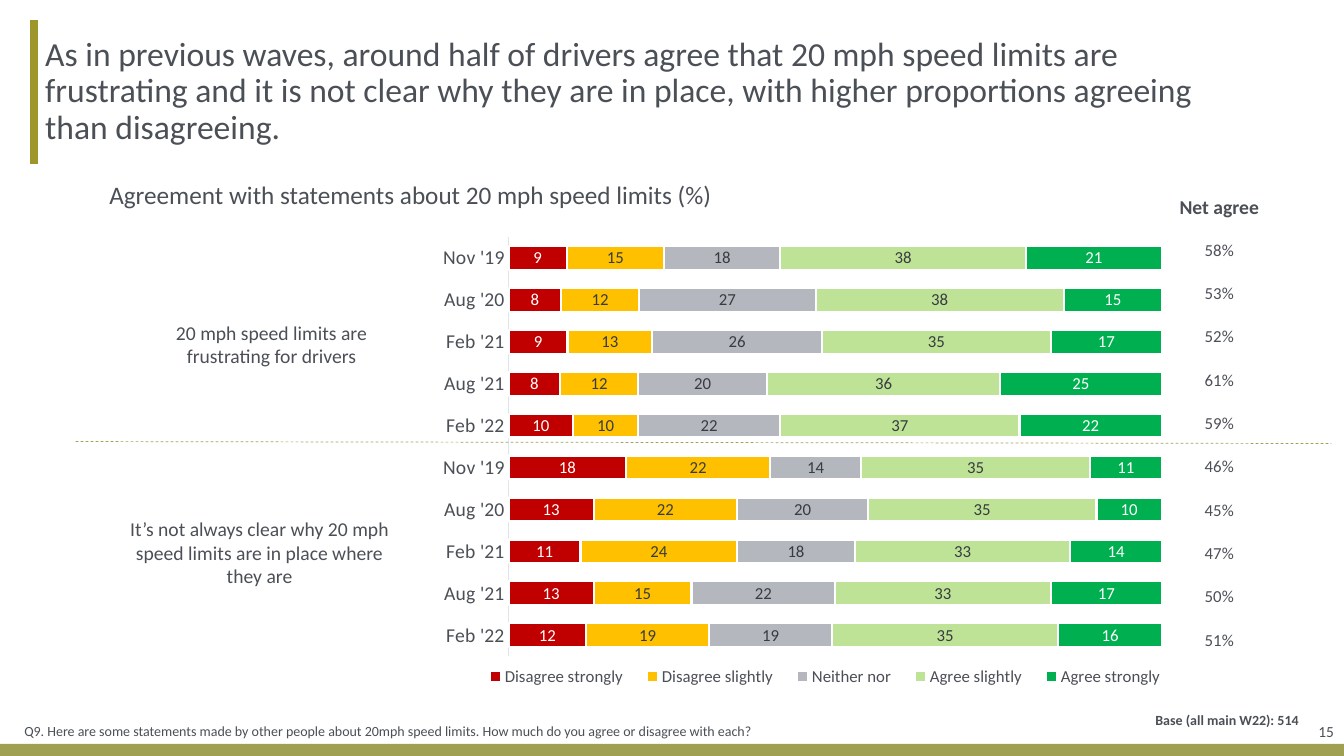
from lxml.etree import SubElement
from pptx import Presentation
from pptx.chart.data import CategoryChartData
from pptx.dml.color import RGBColor
from pptx.enum.chart import (XL_CHART_TYPE, XL_LABEL_POSITION,
                             XL_LEGEND_POSITION, XL_TICK_MARK)
from pptx.enum.dml import MSO_LINE
from pptx.enum.shapes import MSO_CONNECTOR, MSO_SHAPE
from pptx.enum.text import MSO_ANCHOR, MSO_AUTO_SIZE, PP_ALIGN
from pptx.oxml import parse_xml
from pptx.oxml.ns import nsdecls, qn
from pptx.util import Pt

FONT = "Calibri"
GREY, DARK, WHITE = "4B4F56", "383B40", "FFFFFF"
GOLD, OLIVE = "9F962B", "9FA052"
NO_STYLE = "{2D5ABB26-0587-4C30-8999-92F81FD0307C}"
WAVES = ["Nov '19", "Aug '20", "Feb '21", "Aug '21", "Feb '22"]
SERIES = [
    ("Disagree strongly", [9, 8, 9, 8, 10, 18, 13, 11, 13, 12], "C00000", WHITE),
    ("Disagree slightly", [15, 12, 13, 12, 10, 22, 22, 24, 15, 19], "FFC000", DARK),
    ("Neither nor", [18, 27, 26, 20, 22, 14, 20, 18, 22, 19], "B4B8BE", DARK),
    ("Agree slightly", [38, 38, 35, 36, 37, 35, 35, 33, 33, 35], "BEE396", DARK),
    ("Agree strongly", [21, 15, 17, 25, 22, 11, 10, 14, 17, 16], "00B050", WHITE),
]
NET = [58, 53, 52, 61, 59, 46, 45, 47, 50, 51]


def rgb(code):
    return RGBColor.from_string(code)


def style(font, size, color=GREY, bold=False):
    font.name, font.size, font.bold = FONT, Pt(size), bold
    font.color.rgb = rgb(color)


def write(frame, text, size, align=PP_ALIGN.LEFT, bold=False):
    para = frame.paragraphs[0]
    para.alignment = align
    run = para.add_run()
    run.text = text
    style(run.font, size, bold=bold)
    return para


def label(slide, box, text, size, align=PP_ALIGN.LEFT, bold=False,
          anchor=MSO_ANCHOR.TOP):
    frame = slide.shapes.add_textbox(*map(Pt, box)).text_frame
    frame.word_wrap = True
    frame.vertical_anchor = anchor
    write(frame, text, size, align, bold)


def rule(slide, ends, color, width, dash=None):
    line = slide.shapes.add_connector(MSO_CONNECTOR.STRAIGHT, *map(Pt, ends))
    line.line.color.rgb = rgb(color)
    line.line.width = Pt(width)
    if dash:
        line.line.dash_style = dash
    SubElement(line._element.spPr, qn("a:effectLst"))


def heading(slide, box, text):
    left, top, width, height = box
    rule(slide, (left - 2.2, top, left - 2.2, top + height), GOLD, 6)
    title = slide.shapes.title
    title.left, title.top, title.width, title.height = map(Pt, box)
    frame = title.text_frame
    frame.word_wrap = True
    frame.auto_size = MSO_AUTO_SIZE.NONE
    frame.vertical_anchor = MSO_ANCHOR.MIDDLE
    frame.margin_left = Pt(5.7)
    frame.margin_top = frame.margin_right = frame.margin_bottom = 0
    write(frame, text, 24).line_spacing = 0.9


def layout(x, y, w, h, target=""):
    """Manual chart layout, in shares of the chart's box."""
    return parse_xml(
        f'<c:layout {nsdecls("c")}><c:manualLayout>{target}'
        '<c:xMode val="edge"/><c:yMode val="edge"/>'
        f'<c:x val="{x}"/><c:y val="{y}"/><c:w val="{w}"/><c:h val="{h}"/>'
        '</c:manualLayout></c:layout>')


def bars(slide, box):
    data = CategoryChartData(number_format="0")
    data.categories = WAVES * 2
    for name, vals, _, _ in SERIES:
        data.add_series(name, vals)
    chart = slide.shapes.add_chart(
        XL_CHART_TYPE.BAR_STACKED_100, *map(Pt, box), data).chart
    style(chart.font, 10)
    chart.has_title = False

    plot = chart.plots[0]
    plot.gap_width, plot.overlap, plot.vary_by_categories = 75, 100, False
    for part, (_, _, fill, ink) in zip(plot.series, SERIES):
        part.format.fill.solid()
        part.format.fill.fore_color.rgb = rgb(fill)
        part.format.line.color.rgb = rgb(WHITE)
        part.format.line.width = Pt(1.5)
        tags = part.data_labels
        tags.show_value = True
        tags.position = XL_LABEL_POSITION.CENTER
        tags.number_format, tags.number_format_is_linked = "0", False
        style(tags.font, 12, ink)

    cats = chart.category_axis
    cats.reverse_order = True
    cats.major_tick_mark = cats.minor_tick_mark = XL_TICK_MARK.NONE
    cats.format.line.color.rgb = rgb("E3E4E7")
    cats.format.line.width = Pt(0.75)
    style(cats.tick_labels.font, 14)
    vals = chart.value_axis
    vals.minimum_scale, vals.maximum_scale = 0, 1
    vals.has_major_gridlines = vals.visible = False

    chart.has_legend = True
    key = chart.legend
    key.position, key.include_in_layout = XL_LEGEND_POSITION.BOTTOM, False
    style(key.font, 12)
    for old in key._element.findall(qn("c:layout")):
        key._element.remove(old)
    key._element.find(qn("c:legendPos")).addnext(layout(0.35, 0.93, 0.61, 0.06))
    area = chart._chartSpace.chart.plotArea
    for old in area.findall(qn("c:layout")):
        area.remove(old)
    area.insert(0, layout(0.382, 0.126, 0.563, 0.796,
                          '<c:layoutTarget val="inner"/>'))


def scores(slide, box):
    """Net agreement, one row for each bar."""
    texts = ["Net agree"] + [f"{n}%" for n in NET]
    table = slide.shapes.add_table(len(texts), 1, *map(Pt, box)).table
    table.first_row = table.horz_banding = False
    table._tbl.tblPr.find(qn("a:tableStyleId")).text = NO_STYLE
    head = 29.5
    step = (box[3] - head) / len(NET)
    for i, text in enumerate(texts):
        table.rows[i].height = Pt(step if i else head)
        cell = table.cell(i, 0)
        cell.fill.background()
        cell.vertical_anchor = MSO_ANCHOR.MIDDLE
        write(cell.text_frame, text, 12 if i else 14, PP_ALIGN.CENTER, i == 0)


def footer(slide, box):
    left, top, width, height = box
    band = slide.shapes.add_shape(MSO_SHAPE.RECTANGLE, *map(Pt, box))
    band.shadow.inherit = False
    band.fill.solid()
    band.fill.fore_color.rgb = rgb(OLIVE)
    band.line.fill.background()
    mid = MSO_ANCHOR.MIDDLE
    label(slide, (left + 10.3, top - 19, 717, 20),
          "Q9. Here are some statements made by other people about 20mph speed "
          "limits. How much do you agree or disagree with each?", 10, anchor=mid)
    label(slide, (width - 316, top - 27, 290.7, 20),
          "Base (all main W22): 514", 10, PP_ALIGN.RIGHT, True, mid)
    label(slide, (width - 66, top - 20, 66, 22), "15", 11, PP_ALIGN.RIGHT, anchor=mid)


def main():
    deck = Presentation()
    deck.slide_width, deck.slide_height = Pt(960), Pt(540)
    slide = deck.slides.add_slide(deck.slide_layouts[5])
    heading(slide, (26.6, 14.4, 838.8, 102.5),
            "As in previous waves, around half of drivers agree that 20 mph speed "
            "limits are frustrating and it is not clear why they are in place, "
            "with higher proportions agreeing than disagreeing.")
    bars(slide, (46.8, 121.7, 828.7, 376.6))
    label(slide, (71, 124.6, 682, 29),
          "Agreement with statements about 20 mph speed limits (%)", 18)
    label(slide, (91.4, 225.4, 205.2, 41),
          "20 mph speed limits are frustrating for drivers", 14, PP_ALIGN.CENTER)
    label(slide, (82.8, 365.8, 205.2, 58),
          "It’s not always clear why 20 mph speed limits are in place where "
          "they are", 14, PP_ALIGN.CENTER)
    rule(slide, (54, 315.4, 951, 316.8), OLIVE, 0.5, MSO_LINE.DASH)
    scores(slide, (830.2, 133.9, 81.4, 339.1))
    footer(slide, (0, 531.4, 960, 10.8))
    deck.save("out.pptx")


if __name__ == "__main__":
    main()
